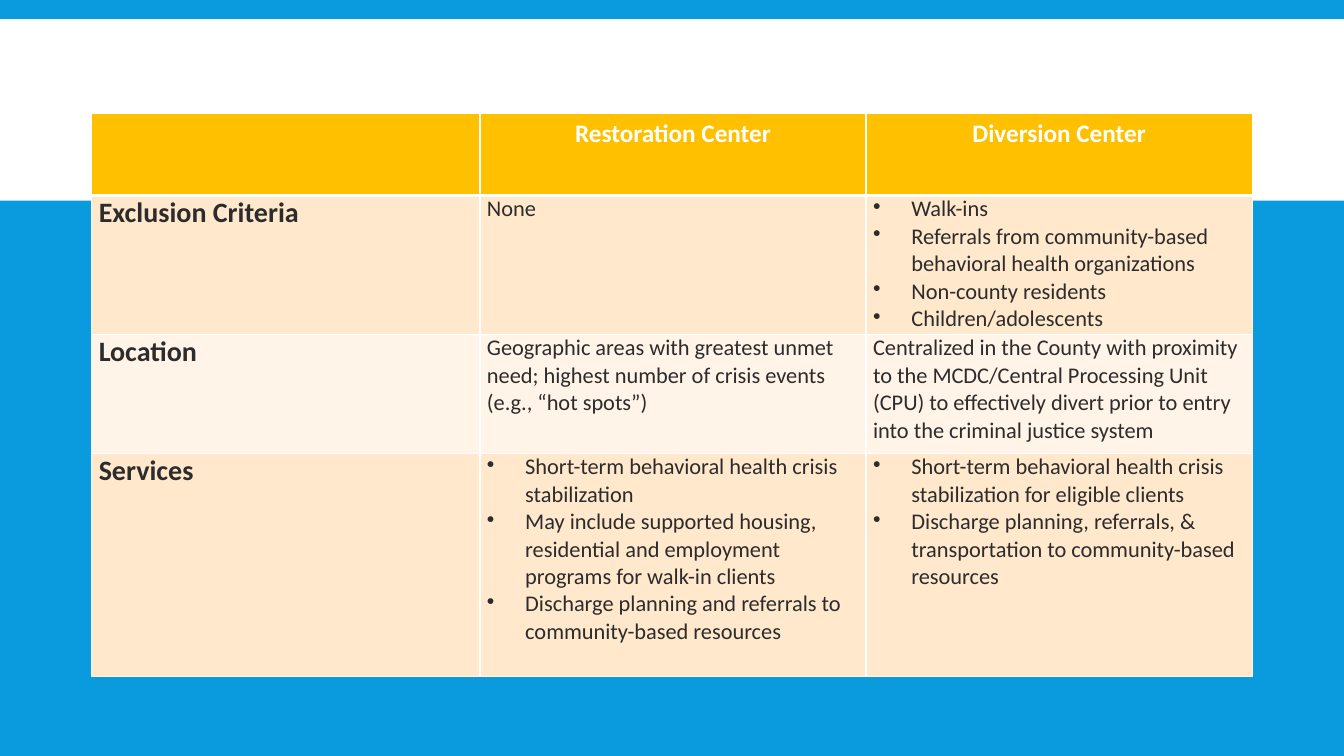
"""Build a slide comparing restoration and diversion centers in a table."""
from dataclasses import dataclass

from lxml.etree import SubElement
from pptx import Presentation
from pptx.dml.color import RGBColor
from pptx.enum.shapes import MSO_SHAPE
from pptx.enum.text import PP_ALIGN
from pptx.oxml.ns import qn
from pptx.slide import Slide
from pptx.table import Table, _Cell
from pptx.text.text import _Paragraph
from pptx.util import Inches, Pt


@dataclass(frozen=True)
class Theme:
    font: str = "Calibri"
    background: str = "099BDD"
    white: str = "FFFFFF"
    header: str = "FFC000"
    bands: tuple[str, str] = ("FFE8CC", "FFF4E7")
    text: str = "2C2C2C"
    header_size: int = 18
    topic_size: int = 20
    body_size: int = 16


@dataclass(frozen=True)
class Entry:
    lines: tuple[str, ...]
    bulleted: bool = False


@dataclass(frozen=True)
class Criterion:
    topic: str
    restoration: Entry
    diversion: Entry
    height: float


THEME = Theme()
HEADINGS = ("", "Restoration Center", "Diversion Center")
HEADER_HEIGHT = 0.81
COLUMN_WIDTHS = (3.85, 3.83, 3.83)
CRITERIA = (
    Criterion(
        "Exclusion Criteria",
        Entry(("None",)),
        Entry((
            "Walk-ins",
            "Referrals from community-based behavioral health organizations",
            "Non-county residents",
            "Children/adolescents",
        ), bulleted=True),
        1.38,
    ),
    Criterion(
        "Location",
        Entry(("Geographic areas with greatest unmet need; highest number of "
               "crisis events (e.g., “hot spots”)",)),
        Entry(("Centralized in the County with proximity to the MCDC/Central "
               "Processing Unit (CPU) to effectively divert prior to entry "
               "into the criminal justice system",)),
        1.18,
    ),
    Criterion(
        "Services",
        Entry((
            "Short-term behavioral health crisis stabilization",
            "May include supported housing, residential and employment "
            "programs for walk-in clients",
            "Discharge planning and referrals to community-based resources",
        ), bulleted=True),
        Entry((
            "Short-term behavioral health crisis stabilization for eligible clients",
            "Discharge planning, referrals, & transportation to "
            "community-based resources",
        ), bulleted=True),
        2.21,
    ),
)


def rgb(value: str) -> RGBColor:
    return RGBColor.from_string(value)


def add_bullet(paragraph: _Paragraph) -> None:
    properties = paragraph._p.get_or_add_pPr()
    properties.set("marL", str(Inches(0.38)))
    properties.set("indent", str(Inches(-0.38)))
    bullet = properties.makeelement(qn("a:buChar"), {"char": "•"})
    properties.insert(0, bullet)


def style_cell(cell: _Cell, fill: str, bottom: float = 1, top: float = 1) -> None:
    properties = cell._tc.get_or_add_tcPr()
    for side, width in (("L", 1), ("R", 1), ("T", top), ("B", bottom)):
        border = SubElement(properties, qn(f"a:ln{side}"), w=str(Pt(width)))
        paint = SubElement(border, qn("a:solidFill"))
        SubElement(paint, qn("a:srgbClr"), val=THEME.white)
    cell.fill.solid()
    cell.fill.fore_color.rgb = rgb(fill)


def write_cell(cell: _Cell, entry: Entry, size: int, color: str,
               bold: bool = False, align: PP_ALIGN = PP_ALIGN.LEFT) -> None:
    frame = cell.text_frame
    frame.text = "\n".join(entry.lines)
    for paragraph in frame.paragraphs:
        paragraph.alignment = align
        font = paragraph.font
        font.name, font.size, font.bold = THEME.font, Pt(size), bold
        font.color.rgb = rgb(color)
        if entry.bulleted:
            add_bullet(paragraph)


def fill_header(table: Table) -> None:
    table.rows[0].height = Inches(HEADER_HEIGHT)
    for cell, heading in zip(table.rows[0].cells, HEADINGS):
        style_cell(cell, THEME.header, bottom=3)
        write_cell(cell, Entry((heading,)), THEME.header_size, THEME.white,
                   bold=True, align=PP_ALIGN.CENTER)


def fill_criterion(table: Table, index: int, criterion: Criterion) -> None:
    row = table.rows[index]
    row.height = Inches(criterion.height)
    for cell in row.cells:
        cell.margin_left = cell.margin_right = Inches(0.07)
        cell.margin_top = cell.margin_bottom = 0
        style_cell(cell, THEME.bands[(index - 1) % 2], top=3 if index == 1 else 1)
    topic, restoration, diversion = row.cells
    write_cell(topic, Entry((criterion.topic,)), THEME.topic_size, THEME.text, bold=True)
    write_cell(restoration, criterion.restoration, THEME.body_size, THEME.text)
    write_cell(diversion, criterion.diversion, THEME.body_size, THEME.text)


def add_title_band(slide: Slide) -> None:
    band = slide.shapes.add_shape(MSO_SHAPE.RECTANGLE, 0, Inches(0.19),
                                  Inches(13.33), Inches(1.8))
    band.shadow.inherit = False
    band.fill.solid()
    band.fill.fore_color.rgb = rgb(THEME.white)
    band.line.fill.background()


def add_comparison(slide: Slide) -> None:
    height = HEADER_HEIGHT + sum(criterion.height for criterion in CRITERIA)
    table = slide.shapes.add_table(
        len(CRITERIA) + 1, len(HEADINGS), Inches(0.91), Inches(1.13),
        Inches(sum(COLUMN_WIDTHS)), Inches(height)).table
    for column, width in zip(table.columns, COLUMN_WIDTHS):
        column.width = Inches(width)
    fill_header(table)
    for index, criterion in enumerate(CRITERIA, start=1):
        fill_criterion(table, index, criterion)


def main() -> None:
    presentation = Presentation()
    presentation.slide_width = Inches(13.33)
    presentation.slide_height = Inches(7.5)
    slide = presentation.slides.add_slide(presentation.slide_layouts[6])
    slide.background.fill.solid()
    slide.background.fill.fore_color.rgb = rgb(THEME.background)
    add_title_band(slide)
    add_comparison(slide)
    presentation.save("out.pptx")


if __name__ == "__main__":
    main()
